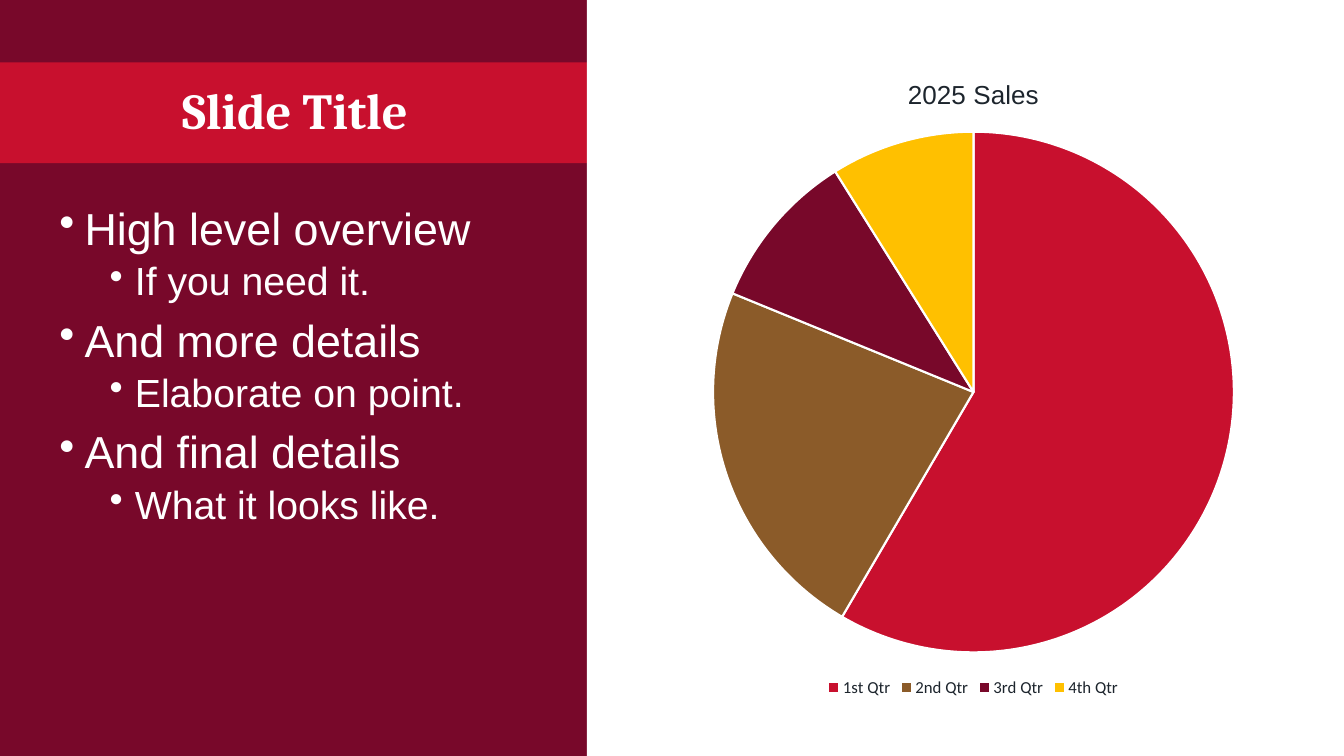
from lxml import etree
from pptx import Presentation
from pptx.chart.data import CategoryChartData
from pptx.dml.color import RGBColor
from pptx.enum.chart import XL_CHART_TYPE as Chart, XL_LEGEND_POSITION as Legend
from pptx.enum.shapes import MSO_SHAPE as Shape
from pptx.enum.text import MSO_ANCHOR as Anchor, MSO_AUTO_SIZE as Fit, PP_ALIGN as Align
from pptx.oxml.ns import qn
from pptx.util import Inches, Pt

MAROON = RGBColor(0x78, 0x08, 0x2A)
RED = RGBColor(0xC8, 0x10, 0x2E)
BROWN = RGBColor(0x8B, 0x5B, 0x29)
GOLD = RGBColor(0xFF, 0xC0, 0x00)
WHITE = RGBColor(0xFF, 0xFF, 0xFF)
INK = RGBColor(0x1D, 0x25, 0x2D)


def style(font, name, size, color, bold=False):
    font.name, font.size, font.bold = name, Pt(size), bold
    font.color.rgb = color


deck = Presentation()
deck.slide_width, deck.slide_height = Inches(13.33), Inches(7.5)
slide = deck.slides.add_slide(deck.slide_layouts[5])
slide.background.fill.solid()
slide.background.fill.fore_color.rgb = MAROON

# Title band and white chart panel
for left, top, width, height, color in [
    (0, 0.62, 5.82, 1, RED),
    (5.82, 0, 7.51, 7.5, WHITE),
]:
    block = slide.shapes.add_shape(
        Shape.RECTANGLE, Inches(left), Inches(top), Inches(width), Inches(height))
    block.shadow.inherit = False
    block.fill.solid()
    block.fill.fore_color.rgb = color
    block.line.fill.background()

# Sales pie
data = CategoryChartData()
data.categories = ["1st Qtr", "2nd Qtr", "3rd Qtr", "4th Qtr"]
data.add_series("Series 1", (59, 23, 10, 9))
chart = slide.shapes.add_chart(
    Chart.PIE, Inches(6.29), Inches(0.54), Inches(6.73), Inches(6.42), data).chart
style(chart.font, "Calibri", 10, INK)

chart.has_title = True
chart.chart_title.include_in_layout = False
head = chart.chart_title.text_frame.paragraphs[0]
head.text = "2025 Sales"
style(head.font, "Arial", 18.6, INK)

chart.has_legend = True
chart.legend.position = Legend.BOTTOM
chart.legend.include_in_layout = False
style(chart.legend.font, "Calibri", 12, INK)

plot = chart.plots[0]
plot.vary_by_categories = True
for index, color in enumerate([RED, BROWN, MAROON, GOLD]):
    slice_format = plot.series[0].points[index].format
    slice_format.fill.solid()
    slice_format.fill.fore_color.rgb = color
    slice_format.line.color.rgb = WHITE
    slice_format.line.width = Pt(1.5)

# Title, brought in front of its band
title = slide.shapes.title
title.left, title.top = Inches(0.71), Inches(0.58)
title.width, title.height = Inches(4.43), Inches(0.86)
title.text_frame.auto_size = Fit.NONE
title.text_frame.vertical_anchor = Anchor.BOTTOM
para = title.text_frame.paragraphs[0]
para.text = "Slide Title"
para.alignment = Align.CENTER
para.line_spacing = 0.9
style(para.font, "Cambria", 36, WHITE, bold=True)
title.element.getparent().append(title.element)

# Bullets: each point is followed by its detail
body = slide.shapes.add_textbox(
    Inches(0.49), Inches(2), Inches(4.86), Inches(4.76)).text_frame
body.word_wrap = True
lines = [
    "High level overview", "If you need it.",
    "And more details", "Elaborate on point.",
    "And final details", "What it looks like.",
]
for index, text in enumerate(lines):
    para = body.add_paragraph() if index else body.paragraphs[0]
    para.text = text
    para.level = index % 2
    para.line_spacing = 0.9
    para.space_before = Pt((10, 5)[para.level])
    style(para.font, "Arial", (32, 28)[para.level], WHITE)
    props = para._p.get_or_add_pPr()
    props.set("marL", str(Inches((0.25, 0.75)[para.level])))
    props.set("indent", str(Inches(-0.25)))
    bullet = etree.Element(qn("a:buChar"), char="•")
    props.find(qn("a:defRPr")).addprevious(bullet)

deck.save("out.pptx")
